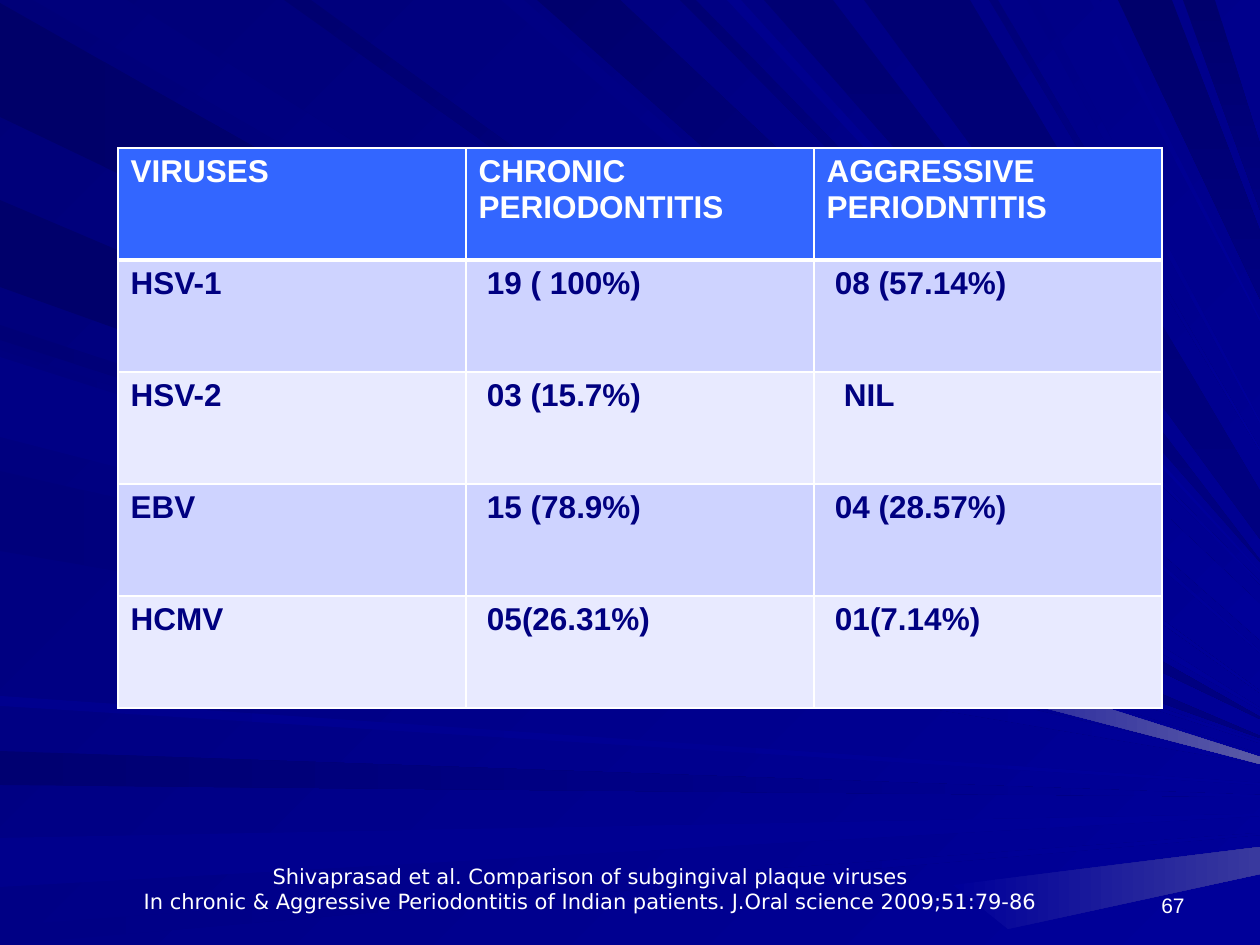
from pptx import Presentation
from pptx.dml.color import RGBColor
from pptx.enum.text import MSO_ANCHOR, PP_ALIGN
from pptx.oxml import parse_xml
from pptx.oxml.ns import nsdecls
from pptx.util import Emu, Pt

EMU_PER_PX = 914400 / 126
WIDTH, HEIGHT = 1260, 945
WHITE, NAVY, ROYAL, DEEP = "FFFFFF", "000080", "3366FF", "000099"
BANDS = ["CED3FF", "E8EAFF"]

RAYS = [
    ("left", 3, 117, 718, "000069", NAVY),
    ("top", 33, 127, 709, "00007B", DEEP),
    ("left", 751, 785, 796, "000071", DEEP),
    ("left", 838, 887, 815, "00008C", DEEP),
    ("left", 926, HEIGHT, 834, "000085", DEEP),
    ("left", 325, 340, 742, "000076", DEEP),
    ("left", 200, 287, 737, "00006B", NAVY),
    ("top", 501, 524, 652, "000083", DEEP),
    ("top", 537, 620, 622, "00006D", DEEP, 36),
    ("top", 680, 696, 583, "000073", DEEP),
    ("top", 764, 833, 561, "000073", NAVY),
    ("top", 1118, 1172, 265, "00006B", NAVY, 68),
    ("top", 1183, 1215, 177, "00006D", NAVY, 66),
    ("left", 350, 431, 755, "00007E", DEEP),
    ("left", 471, 551, 763, "00007B", DEEP),
    ("left", 696, 706, 784, "00008E", DEEP),
    ("top", 284, 311, 692, "000070", DEEP),
    ("top", 727, 741, 572, "00008E", DEEP),
    ("top", 864, 970, 515, "000073", NAVY, 48),
    ("top", 989, 998, 450, "000078", DEEP),
    ("top", 1027, 1038, 422, "000085", DEEP),
    ("top", 1090, 1099, 320, "00008A", DEEP),
    ("left", 357, 437, 760, "000085", DEEP),
]
GLINTS = [
    ("39399E", [(WIDTH, 874), (WIDTH, 847), (953, 885), (1008, 929)]),
    ("5A5AA6", [(WIDTH, 757), (803, 611), (798, 644), (WIDTH, 764)]),
]

VIRUS_ROWS = [
    ["VIRUSES", "CHRONIC PERIODONTITIS", "AGGRESSIVE PERIODNTITIS"],
    ["HSV-1", "19 ( 100%)", "08 (57.14%)"],
    ["HSV-2", "03 (15.7%)", "NIL"],
    ["EBV", "15 (78.9%)", "04 (28.57%)"],
    ["HCMV", "05(26.31%)", "01(7.14%)"],
]


def px(length):
    return Emu(round(length * EMU_PER_PX))


def color(value):
    return RGBColor.from_string(value)


def paint(fill, start, end=None, angle=0):
    if end is None:
        fill.solid()
        fill.fore_color.rgb = color(start)
        return
    fill.gradient()
    fill.gradient_angle = (360 - angle) % 360
    for stop, shade in zip(fill.gradient_stops, (start, end)):
        stop.color.rgb = color(shade)


def write(frame, text, size=12, font="Arial", ink=WHITE, bold=False, align=PP_ALIGN.LEFT):
    frame.word_wrap = True
    frame.text = text
    for paragraph in frame.paragraphs:
        paragraph.alignment = align
        paragraph.font.size = Pt(size)
        paragraph.font.name = font
        paragraph.font.bold = bold
        paragraph.font.color.rgb = color(ink)


class VirusSlide:
    def __init__(self, deck):
        self.slide = deck.slides.add_slide(deck.slide_layouts[6])
        self.shapes = self.slide.shapes
        paint(self.slide.background.fill, "000078", DEEP, 45)

    def beam(self, points, start, end, angle=0):
        outline = self.shapes.build_freeform(*points[0], scale=EMU_PER_PX)
        outline.add_line_segments(points[1:], close=True)
        light = outline.convert_to_shape()
        light.shadow.inherit = False
        light.line.fill.background()
        paint(light.fill, start, end, angle)

    def ray(self, edge, near, far, tip, start, end, spread=2):
        target = [(WIDTH, tip + spread // 2), (WIDTH, tip - spread // 2)]
        if edge == "left":
            self.beam([(0, near), (0, far)] + target, start, end)
        else:
            angle = 90 if end == NAVY else 45
            self.beam([(far, 0), (near, 0)] + target, start, end, angle)

    def borders(self, cell, top, bottom):
        properties = cell._tc.get_or_add_tcPr()
        for side, width in (("L", 1), ("R", 1), ("T", top), ("B", bottom)):
            properties.append(parse_xml(
                f'<a:ln{side} {nsdecls("a")} w="{Pt(width)}"><a:solidFill>'
                f'<a:srgbClr val="{WHITE}"/></a:solidFill></a:ln{side}>'))

    def table(self, left, top, column_width, row_height, rows):
        grid = self.shapes.add_table(
            len(rows), len(rows[0]), px(left), px(top),
            px(column_width * len(rows[0])), px(row_height * len(rows))).table
        for column in grid.columns:
            column.width = px(column_width)
        for r, values in enumerate(rows):
            grid.rows[r].height = px(row_height)
            header = r == 0
            for c, value in enumerate(values):
                cell = grid.cell(r, c)
                self.borders(cell, 3 if r == 1 else 1, 3 if header else 1)
                paint(cell.fill, ROYAL if header else BANDS[(r - 1) % 2])
                write(cell.text_frame, value, size=18, bold=True, ink=WHITE if header else NAVY)
                if c and not header:
                    cell.margin_left = px(30 if value == "NIL" else 21)

    def caption(self, left, top, width, height, text, bottom_inset=6, **style):
        frame = self.shapes.add_textbox(px(left), px(top), px(width), px(height)).text_frame
        frame.vertical_anchor = MSO_ANCHOR.BOTTOM
        frame.margin_bottom = px(bottom_inset)
        write(frame, text, **style)


def main():
    deck = Presentation()
    deck.slide_width, deck.slide_height = px(WIDTH), px(HEIGHT)
    page = VirusSlide(deck)
    for ray in RAYS:
        page.ray(*ray)
    for shine, corners in GLINTS:
        page.beam(corners, DEEP, shine)
    page.table(118, 148, 348, 112, VIRUS_ROWS)
    page.caption(
        69, 882, 1043, 63,
        "Shivaprasad et al. Comparison of subgingival plaque viruses\n"
        "In chronic & Aggressive Periodontitis of Indian patients. J.Oral science 2009;51:79-86",
        bottom_inset=31, font="DejaVu Sans", align=PP_ALIGN.CENTER)
    page.caption(903, 861, 294, 63, "67", align=PP_ALIGN.RIGHT)
    deck.save("out.pptx")


if __name__ == "__main__":
    main()
